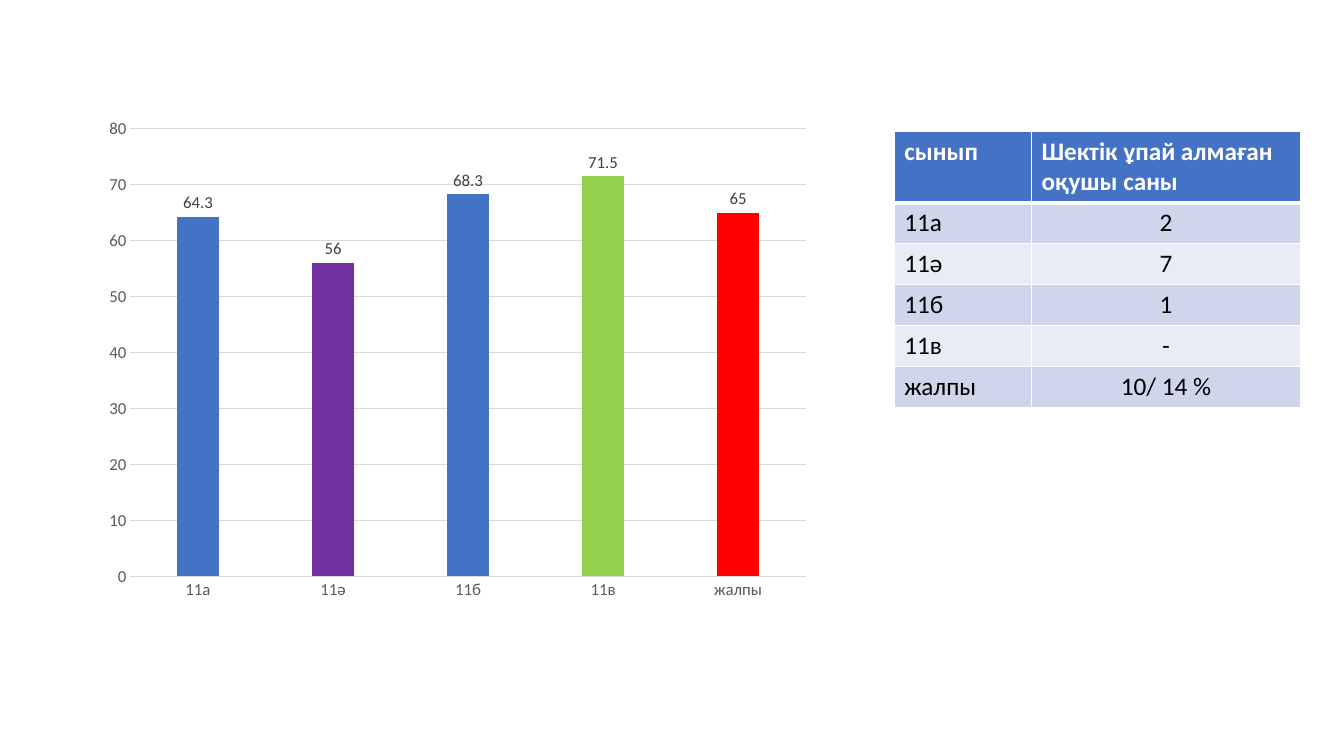
import dataclasses

import lxml.etree
import pptx
import pptx.chart.axis
import pptx.chart.chart
import pptx.chart.data
import pptx.dml.color
import pptx.enum.chart
import pptx.enum.text
import pptx.oxml
import pptx.oxml.ns
import pptx.slide
import pptx.table
import pptx.text.text
import pptx.util


@dataclasses.dataclass(frozen=True)
class Theme:
    font: str = "Calibri"
    chart_size: int = 12
    table_size: int = 18
    blue: str = "4472C4"
    purple: str = "7030A0"
    green: str = "92D050"
    red: str = "FF0000"
    white: str = "FFFFFF"
    black: str = "000000"
    axis_text: str = "595959"
    label_text: str = "404040"
    grid: str = "D9D9D9"
    bands: tuple[str, str] = ("CFD5EA", "E9EBF5")


THEME = Theme()


@dataclasses.dataclass(frozen=True)
class ClassResult:
    name: str
    score: float
    color: str
    below_threshold: str


RESULTS = [
    ClassResult("11а", 64.3, THEME.blue, "2"),
    ClassResult("11ә", 56, THEME.purple, "7"),
    ClassResult("11б", 68.3, THEME.blue, "1"),
    ClassResult("11в", 71.5, THEME.green, "-"),
    ClassResult("жалпы", 65, THEME.red, "10/ 14 %"),
]
HEADINGS = ("сынып", "Шектік ұпай алмаған оқушы саны")
COLUMN_WIDTHS = (1.36, 2.67)
TABLE_HEIGHT = 2.73
HEADER_HEIGHT = 0.7
PLOT_LAYOUT = {"x": 0.05, "y": 0.08, "w": 0.92, "h": 0.81}


def rgb(color: str) -> pptx.dml.color.RGBColor:
    return pptx.dml.color.RGBColor.from_string(color)


def style_font(font: pptx.text.text.Font, size: int, color: str, bold: bool = False) -> None:
    font.name = THEME.font
    font.size = pptx.util.Pt(size)
    font.bold = bold
    font.color.rgb = rgb(color)


def place_plot(chart: pptx.chart.chart.Chart) -> None:
    qn = pptx.oxml.ns.qn
    plot_area = chart._chartSpace.chart.plotArea
    for previous in plot_area.findall(qn("c:layout")):
        plot_area.remove(previous)
    layout = lxml.etree.Element(qn("c:layout"))
    manual = lxml.etree.SubElement(layout, qn("c:manualLayout"))
    settings = {"layoutTarget": "inner", "xMode": "edge", "yMode": "edge", **PLOT_LAYOUT}
    for tag, value in settings.items():
        lxml.etree.SubElement(manual, qn(f"c:{tag}")).set("val", str(value))
    plot_area.insert(0, layout)


def style_axis(axis: pptx.chart.axis._BaseAxis) -> None:
    axis.major_tick_mark = pptx.enum.chart.XL_TICK_MARK.NONE
    axis.minor_tick_mark = pptx.enum.chart.XL_TICK_MARK.NONE
    style_font(axis.tick_labels.font, THEME.chart_size, THEME.axis_text)


def add_score_chart(page: pptx.slide.Slide) -> None:
    inches = pptx.util.Inches
    data = pptx.chart.data.CategoryChartData()
    data.categories = [result.name for result in RESULTS]
    data.add_series("Series 1", [result.score for result in RESULTS])
    chart = page.shapes.add_chart(
        pptx.enum.chart.XL_CHART_TYPE.COLUMN_CLUSTERED,
        inches(0.93), inches(0.84), inches(7.28), inches(5.48), data,
    ).chart
    chart.has_legend = False
    chart.has_title = False
    style_font(chart.font, THEME.chart_size, THEME.black)
    place_plot(chart)

    style_axis(chart.category_axis)
    style_axis(chart.value_axis)
    chart.value_axis.minimum_scale = 0
    chart.value_axis.maximum_scale = 80
    chart.value_axis.major_unit = 10
    chart.value_axis.format.line.fill.background()
    for line in (chart.category_axis.format.line, chart.value_axis.major_gridlines.format.line):
        line.color.rgb = rgb(THEME.grid)
        line.width = pptx.util.Pt(0.75)

    plot = chart.plots[0]
    plot.vary_by_categories = False
    plot.gap_width = 219
    plot.overlap = -27
    series = plot.series[0]
    series.invert_if_negative = False
    series.format.fill.solid()
    series.format.fill.fore_color.rgb = rgb(THEME.blue)
    for index, result in enumerate(RESULTS):
        if result.color != THEME.blue:
            fill = series.points[index].format.fill
            fill.solid()
            fill.fore_color.rgb = rgb(result.color)

    labels = series.data_labels
    labels.show_value = True
    labels.position = pptx.enum.chart.XL_LABEL_POSITION.OUTSIDE_END
    style_font(labels.font, THEME.chart_size, THEME.label_text)


def add_borders(cell: pptx.table._Cell, bottom: int) -> None:
    properties = cell._tc.get_or_add_tcPr()
    for side, width in {"L": 1, "R": 1, "T": 1, "B": bottom}.items():
        border = lxml.etree.SubElement(properties, pptx.oxml.ns.qn(f"a:ln{side}"))
        border.set("w", str(pptx.util.Pt(width)))
        fill = lxml.etree.SubElement(border, pptx.oxml.ns.qn("a:solidFill"))
        lxml.etree.SubElement(fill, pptx.oxml.ns.qn("a:srgbClr")).set("val", THEME.white)


def fill_cell(cell: pptx.table._Cell, text: str, fill: str, header: bool, centered: bool) -> None:
    add_borders(cell, 3 if header else 1)
    cell.fill.solid()
    cell.fill.fore_color.rgb = rgb(fill)
    cell.text_frame.text = text
    para = cell.text_frame.paragraphs[0]
    if centered:
        para.alignment = pptx.enum.text.PP_ALIGN.CENTER
    color = THEME.white if header else THEME.black
    style_font(para.runs[0].font, THEME.table_size, color, header)


def add_threshold_table(page: pptx.slide.Slide) -> None:
    inches = pptx.util.Inches
    rows = [HEADINGS] + [(result.name, result.below_threshold) for result in RESULTS]
    table = page.shapes.add_table(
        len(rows), len(HEADINGS),
        inches(8.87), inches(1.3), inches(sum(COLUMN_WIDTHS)), inches(TABLE_HEIGHT),
    ).table
    for column, width in zip(table.columns, COLUMN_WIDTHS):
        column.width = inches(width)
    body_height = (TABLE_HEIGHT - HEADER_HEIGHT) / len(RESULTS)
    for row_index, texts in enumerate(rows):
        header = row_index == 0
        table.rows[row_index].height = inches(HEADER_HEIGHT if header else body_height)
        fill = THEME.blue if header else THEME.bands[(row_index - 1) % 2]
        for column_index, text in enumerate(texts):
            centered = not header and column_index == 1
            fill_cell(table.cell(row_index, column_index), text, fill, header, centered)


def main() -> None:
    deck = pptx.Presentation()
    deck.slide_width = pptx.util.Inches(13.33)
    deck.slide_height = pptx.util.Inches(7.5)
    page = deck.slides.add_slide(deck.slide_layouts[6])
    add_score_chart(page)
    add_threshold_table(page)
    deck.save("out.pptx")


if __name__ == "__main__":
    main()
